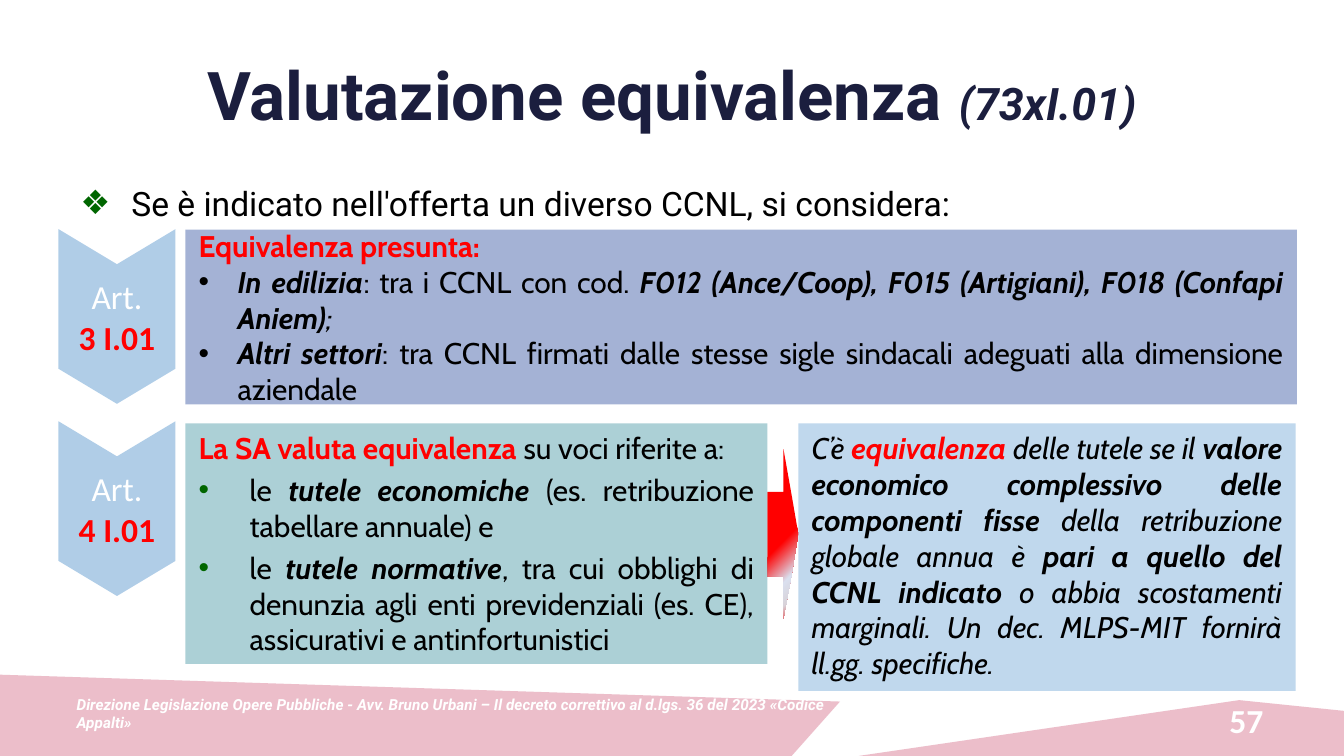
"""Build the slide on how equivalence between collective agreements is assessed."""
from lxml.etree import SubElement
from pptx import Presentation
from pptx.dml.color import RGBColor
from pptx.enum.shapes import MSO_SHAPE as Shape
from pptx.enum.text import MSO_ANCHOR as Anchor, PP_ALIGN as Align
from pptx.oxml.ns import qn
from pptx.util import Inches, Pt

RED, BLACK, WHITE, GREEN, NAVY, PINK = "FF0000", "000000", "FFFFFF", "006600", "1B1E3E", "EBB7C5"

deck = Presentation()
deck.slide_width, deck.slide_height = Inches(10), Inches(10) * 9 // 16
page = deck.slides.add_slide(deck.slide_layouts[6])
shapes = page.shapes
cell = deck.slide_width / 100


def paint(shape, color, opacity=100):
    shape.shadow.inherit = False
    shape.line.fill.background()
    shape.fill.solid()
    shape.fill.fore_color.rgb = RGBColor.from_string(color)
    if opacity < 100:
        tint = next(shape.element.spPr.iter(qn("a:srgbClr")))
        SubElement(tint, qn("a:alpha"), val=str(opacity * 1000))


def write(shape, font, size, align, rows, anchor=Anchor.TOP, before=0, indent=0, bullet="•", marker=BLACK):
    frame = shape.text_frame
    frame.word_wrap, frame.vertical_anchor = True, anchor
    for number, (bulleted, runs) in enumerate(rows):
        para = frame.add_paragraph() if number else frame.paragraphs[0]
        para.alignment = align
        if bulleted:
            props = para._p.get_or_add_pPr()
            props.set("marL", str(Inches(indent)))
            props.set("indent", str(-Inches(indent)))
            SubElement(SubElement(props, qn("a:buClr")), qn("a:srgbClr"), val=marker)
            SubElement(props, qn("a:buFont"), typeface="Arial")
            SubElement(props, qn("a:buChar"), char=bullet)
        if number and before:
            para.space_before = Pt(before)
        para.font.name, para.font.size = font, Pt(size)
        for text, style, color in runs:
            span = para.add_run()
            span.text = text
            span.font.bold, span.font.italic = "b" in style, "i" in style
            span.font.color.rgb = RGBColor.from_string(color)


outlines = [
    (PINK, [(63.9, 56.25), (100, 56.25), (100, 52.9), (92.2, 52.1)]),
    (PINK, [(0, 50.2), (0, 56.25), (58.9, 56.25), (62.5, 52.2)]),
    (RED, [(57.1, 36.6), (58.3, 36.6), (58.3, 33.4), (58.9, 36.8), (59.4, 39.7),
           (58.9, 42.8), (58.3, 46), (58.3, 42.9), (57.1, 42.9)]),
]
for color, corners in outlines:
    (left, top), *others = [(x * cell, y * cell) for x, y in corners]
    builder = shapes.build_freeform(left, top)
    builder.add_line_segments(others, close=True)
    outline = builder.convert_to_shape()
    paint(outline, color, 90 if color == PINK else 100)

arrow = outline
arrow.fill.gradient()
gradient = arrow.element.spPr.find(qn("a:gradFill"))
for child in list(gradient):
    gradient.remove(child)
stops = SubElement(gradient, qn("a:gsLst"))
for position, color in [(54, RED), (75, "DAE0EF"), (87, "D8D3D9"), (100, RED)]:
    stop = SubElement(stops, qn("a:gs"), pos=str(position * 1000))
    SubElement(stop, qn("a:srgbClr"), val=color)
SubElement(gradient, qn("a:lin"), ang=str(45 * 60000), scaled="0")

labels = [
    ((5, 2.3, 90, 9.4), "Roboto", 36, Align.CENTER, Anchor.MIDDLE,
     [(False, [("Valutazione equivalenza ", "b", NAVY), ("(73xI.01)", "bi", NAVY)])]),
    ((71.7, 52.1, 23.3, 3), "Calibri", 18, Align.RIGHT, Anchor.MIDDLE, [(False, [("57", "b", WHITE)])]),
    ((5, 13.1, 90, 4.8), "Roboto", 18, Align.LEFT, Anchor.TOP,
     [(True, [("Se è indicato nell'offerta un diverso CCNL, si considera:", "", BLACK)])]),
    ((5, 51.6, 60, 3), "Roboto", 8.25, Align.LEFT, Anchor.MIDDLE,
     [(False, [("Direzione Legislazione Opere Pubbliche - Avv. Bruno Urbani – Il decreto correttivo "
                "al d.lgs. 36 del 2023 «Codice Appalti»", "bi", WHITE)])]),
]
for place, font, size, align, anchor, rows in labels:
    label = shapes.add_textbox(*[int(length * cell) for length in place])
    write(label, font, size, align, rows, anchor, indent=0.38, bullet="❖", marker=GREEN)
    if size == 36:
        label.text_frame.paragraphs[0].runs[1].font.size = Pt(24)
    if size == 8.25:
        frame = label.text_frame
        frame.margin_left = frame.margin_right = Inches(0.07)
        frame.margin_top = frame.margin_bottom = Inches(0.04)

presumed = [
    (False, [("Equivalenza presunta:", "b", RED)]),
    (True, [("In edilizia", "bi", BLACK), (": tra i CCNL con cod. ", "", BLACK),
            ("F012 (Ance/Coop), F015 (Artigiani), F018 (Confapi Aniem)", "bi", BLACK), (";", "i", BLACK)]),
    (True, [("Altri settori", "bi", BLACK),
            (": tra CCNL firmati dalle stesse sigle sindacali adeguati alla dimensione aziendale", "", BLACK)]),
]
assessed = [
    (False, [("La SA valuta equivalenza ", "b", RED), ("su voci riferite a:", "", BLACK)]),
    (True, [("le ", "", BLACK), ("tutele economiche ", "bi", BLACK),
            ("(es. retribuzione tabellare annuale) e", "", BLACK)]),
    (True, [("le ", "", BLACK), ("tutele normative", "bi", BLACK),
            (", tra cui obblighi di denunzia agli enti previdenziali (es. CE), "
             "assicurativi e antinfortunistici", "", BLACK)]),
]
outcome = [
    (False, [("C’è ", "i", BLACK), ("equivalenza", "bi", RED), (" delle tutele se il ", "i", BLACK),
             ("valore economico complessivo delle componenti fisse ", "bi", BLACK),
             ("della retribuzione globale annua è ", "i", BLACK),
             ("pari a quello del CCNL indicato", "bi", BLACK),
             (" o abbia scostamenti marginali. Un dec. MLPS-MIT fornirà ll.gg. specifiche.", "i", BLACK)]),
]
panels = [
    ((13.8, 17.1, 82.7, 13), "4A66AC", 50, presumed, Anchor.MIDDLE, 0, 0.29, BLACK),
    ((13.8, 31.5, 43.3, 17.9), "5AA2AE", 50, assessed, Anchor.TOP, 3.2, 0.38, GREEN),
    ((59.4, 31.5, 37, 19.9), "C0D8ED", 100, outcome, Anchor.TOP, 0, 0, BLACK),
]
for place, color, opacity, rows, anchor, before, indent, marker in panels:
    panel = shapes.add_shape(Shape.RECTANGLE, *[int(length * cell) for length in place])
    paint(panel, color, opacity)
    write(panel, "Cabin", 16, Align.JUSTIFY, rows, anchor, before, indent, marker=marker)

for top, article in [(19.2, "3 I.01"), (33.5, "4 I.01")]:
    chevron = shapes.add_shape(Shape.CHEVRON, *[int(length * cell) for length in (2.2, top, 13, 8.7)])
    chevron.rotation = 90
    chevron.adjustments[0] = 0.3
    paint(chevron, "629DD1", 50)
    chevron.text_frame._txBody.bodyPr.set("vert", "vert270")
    write(chevron, "Calibri", 18, Align.CENTER,
          [(False, [("Art.", "", WHITE)]), (False, [(article, "b", RED)])], Anchor.MIDDLE)

deck.save("out.pptx")
